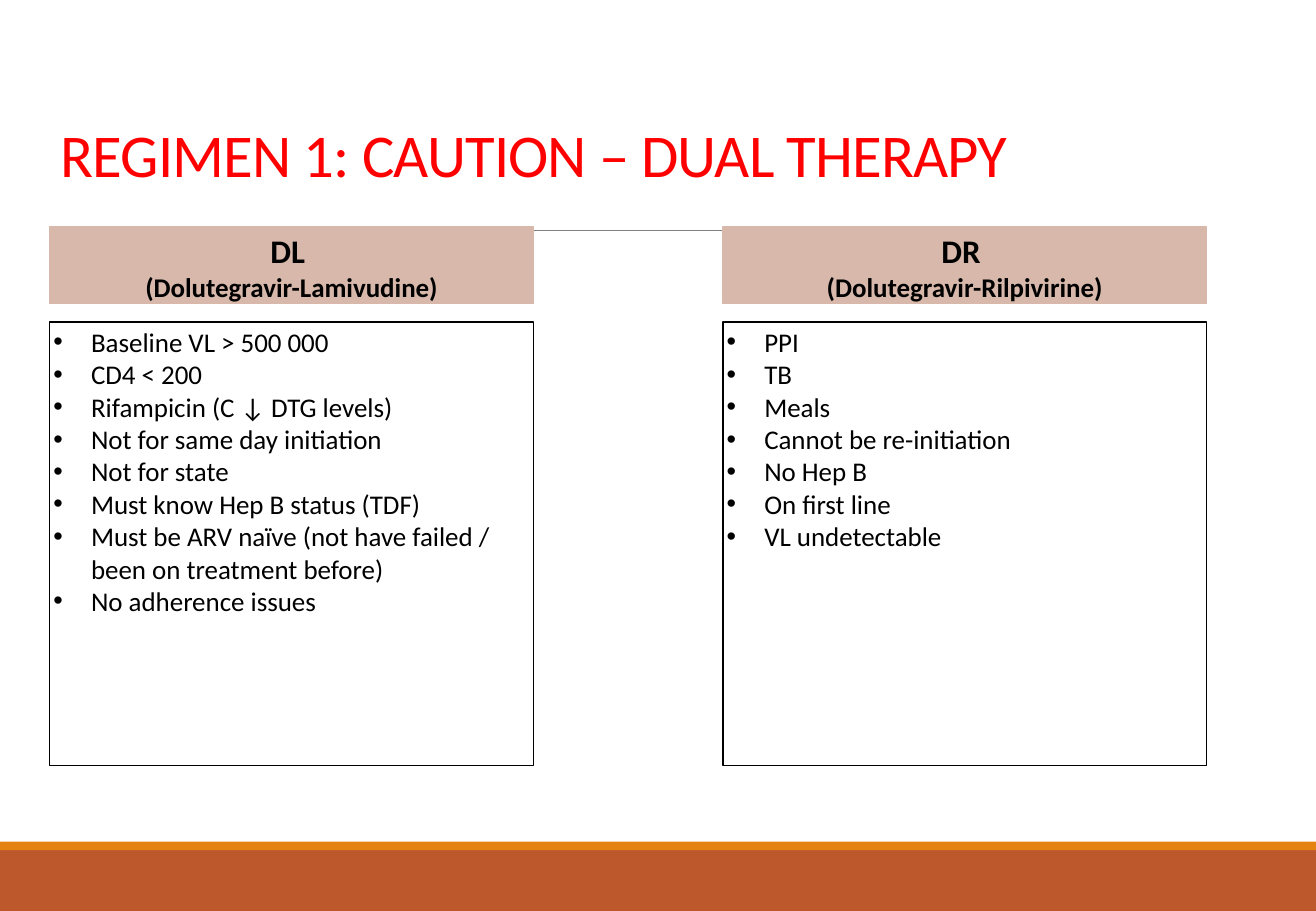
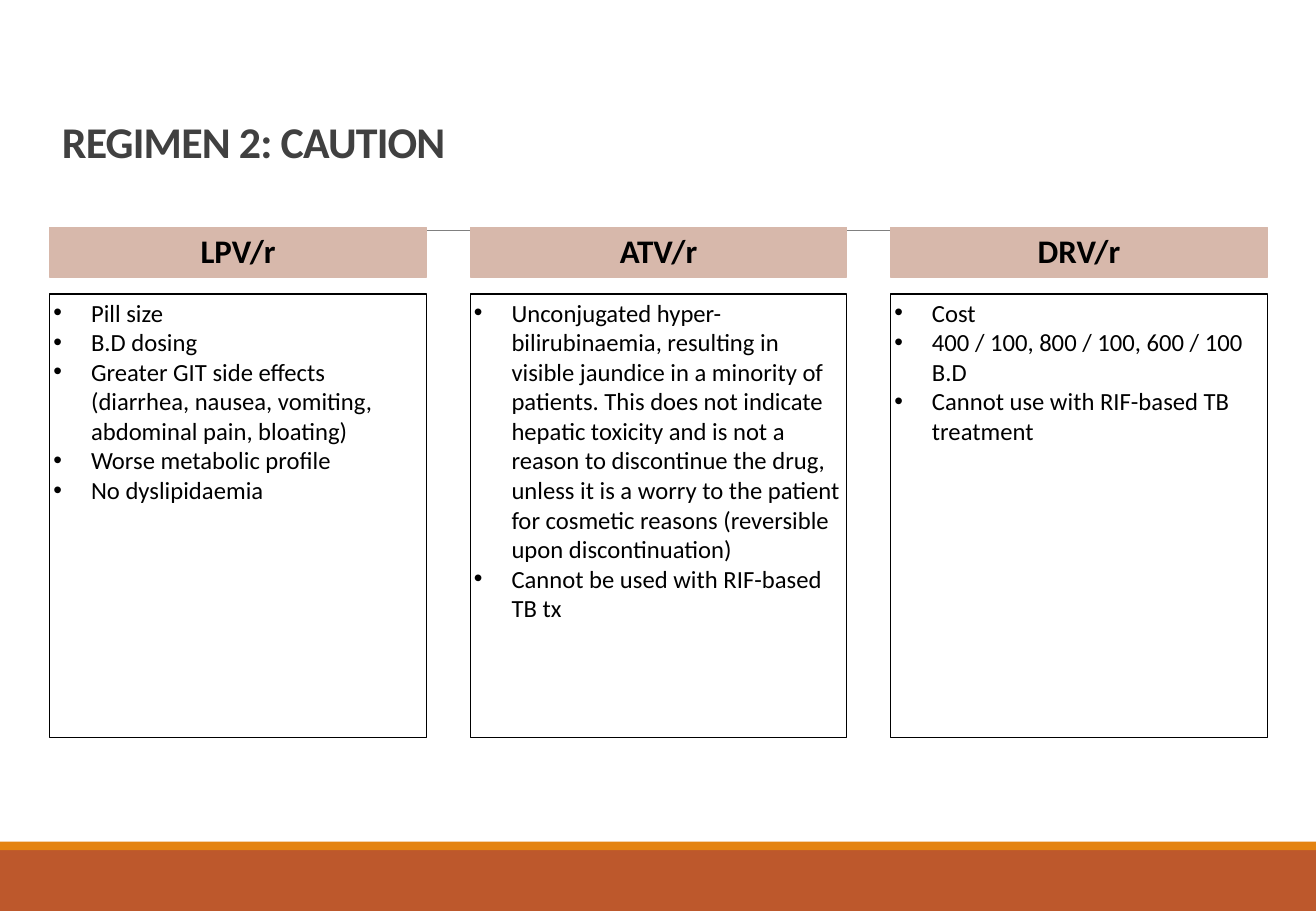
"""Build two slides on cautions for HIV treatment regimens."""
from lxml import etree
from pptx import Presentation
from pptx.dml.color import RGBColor
from pptx.enum.shapes import MSO_CONNECTOR, MSO_SHAPE
from pptx.enum.text import MSO_ANCHOR, MSO_AUTO_SIZE, PP_ALIGN
from pptx.oxml.ns import qn
from pptx.util import Inches, Pt

RECTANGLE = MSO_SHAPE.RECTANGLE
STRAIGHT = MSO_CONNECTOR.STRAIGHT
TOP, BOTTOM = MSO_ANCHOR.TOP, MSO_ANCHOR.BOTTOM
LEFT, CENTER = PP_ALIGN.LEFT, PP_ALIGN.CENTER
NO_AUTOFIT = MSO_AUTO_SIZE.NONE

FONT = "Calibri"
COLORS = {
    "band": "BD582C",
    "stripe": "E48312",
    "rule": "808080",
    "header": "D7B8AB",
    "box": "FFFFFF",
    "text": "000000",
    "alert": "FF0000",
    "title": "404040",
}
SLIDE_WIDTH, SLIDE_HEIGHT = 10.83, 7.5
COLUMN_LEFT, HEADER_TOP, BOX_HEIGHT = 0.41, 1.87, 3.65
PADDING, INDENT = 0.03, 0.31

SLIDES = [
    {
        "title": [("REGIMEN 1: CAUTION – DUAL THERAPY", 36, False)],
        "title_color": "alert",
        "title_box": (0.4, 0.02, 8.94, 1.59),
        "column_width": 3.98,
        "column_step": 5.54,
        "header_height": 0.63,
        "box_top": 2.65,
        "text_size": 16,
        "columns": [
            ("DL \v(Dolutegravir-Lamivudine)", [
                "Baseline VL > 500 000",
                "CD4 < 200",
                "Rifampicin (C ↓ DTG levels)",
                "Not for same day initiation",
                "Not for state",
                "Must know Hep B status (TDF)",
                "Must be ARV naïve (not have failed / been on treatment before)",
                "No adherence issues",
            ]),
            ("DR \v(Dolutegravir-Rilpivirine)", [
                "PPI",
                "TB",
                "Meals",
                "Cannot be re-initiation",
                "No Hep B",
                "On first line",
                "VL undetectable",
            ]),
        ],
    },
    {
        "title": [("REGIMEN 2: CAUTION ", 26, True), (" ", 35.8, False)],
        "title_color": "title",
        "title_box": (0.41, 0.94, 8.94, 0.52),
        "column_width": 3.1,
        "column_step": 3.46,
        "header_height": 0.41,
        "box_top": 2.42,
        "text_size": 14.6,
        "columns": [
            ("LPV/r", [
                "Pill size",
                "B.D dosing",
                "Greater GIT side effects (diarrhea, nausea, vomiting, "
                "abdominal pain, bloating)",
                "Worse metabolic profile",
                "No dyslipidaemia",
            ]),
            ("ATV/r", [
                "Unconjugated hyper-bilirubinaemia, resulting in visible jaundice "
                "in a minority of patients. This does not indicate hepatic toxicity "
                "and is not a reason to discontinue the drug, unless it is a worry "
                "to the patient for cosmetic reasons (reversible upon "
                "discontinuation)",
                "Cannot be used with RIF-based TB tx",
            ]),
            ("DRV/r", [
                "Cost",
                "400 / 100, 800 / 100, 600 / 100 B.D",
                "Cannot use with RIF-based TB treatment",
            ]),
        ],
    },
]


def add_rectangle(slide, box, fill, line=None):
    shape = slide.shapes.add_shape(RECTANGLE, *[Inches(value) for value in box])
    shape.shadow.inherit = False
    shape.fill.solid()
    shape.fill.fore_color.rgb = RGBColor.from_string(COLORS[fill])
    if line:
        shape.line.color.rgb = RGBColor.from_string(COLORS[line])
        shape.line.width = Pt(0.75)
    else:
        shape.line.fill.background()
    frame = shape.text_frame
    frame.word_wrap = True
    frame.vertical_anchor = TOP
    frame.margin_left = frame.margin_right = Inches(PADDING)
    frame.margin_top = frame.margin_bottom = Inches(PADDING)
    return shape


def format_run(run, size, color, bold=False):
    run.font.name = FONT
    run.font.size = Pt(size)
    run.font.bold = bold
    run.font.color.rgb = RGBColor.from_string(COLORS[color])


presentation = Presentation()
presentation.slide_width = Inches(SLIDE_WIDTH)
presentation.slide_height = Inches(SLIDE_HEIGHT)
layout = presentation.slide_layouts[5]
slides = [presentation.slides.add_slide(layout) for content in SLIDES]

band = add_rectangle(slides[0], (0, 7, SLIDE_WIDTH, 0.5), "band")
stripe = add_rectangle(slides[0], (0, 6.93, SLIDE_WIDTH, 0.07), "stripe")
rule = slides[0].shapes.add_connector(
    STRAIGHT, Inches(1.06), Inches(1.9), Inches(9.92), Inches(1.9))
rule.line.color.rgb = RGBColor.from_string(COLORS["rule"])
rule.line.width = Pt(0.5)
etree.SubElement(rule.element.spPr, qn("a:effectLst"))

for index, shape in enumerate((band, stripe, rule)):
    shape.element[0][0].set("id", str(100 + index))
    layout.shapes.element.insert(2 + index, shape.element)

for slide, content in zip(slides, SLIDES):
    title = slide.shapes.title
    title.left, title.top, title.width, title.height = [
        Inches(value) for value in content["title_box"]]
    frame = title.text_frame
    frame.auto_size = NO_AUTOFIT
    frame.word_wrap = True
    frame.vertical_anchor = BOTTOM
    paragraph = frame.paragraphs[0]
    paragraph.alignment = LEFT
    paragraph.line_spacing = 0.85
    for text, size, bold in content["title"]:
        run = paragraph.add_run()
        run.text = text
        format_run(run, size, content["title_color"], bold)
        run.font._element.set("spc", "-50")

    width = content["column_width"]
    for index, (heading, items) in enumerate(content["columns"]):
        left = COLUMN_LEFT + index * content["column_step"]

        box = add_rectangle(
            slide, (left, content["box_top"], width, BOX_HEIGHT), "box", "text")
        box.text_frame.text = "\n".join(items)
        for paragraph in box.text_frame.paragraphs:
            paragraph.alignment = LEFT
            properties = paragraph._p.get_or_add_pPr()
            properties.set("marL", str(Inches(INDENT)))
            properties.set("indent", str(-Inches(INDENT)))
            etree.SubElement(properties, qn("a:buFont"), typeface="Arial")
            etree.SubElement(properties, qn("a:buChar"), char="•")
            format_run(paragraph.runs[0], content["text_size"], "text")

        header = add_rectangle(
            slide, (left, HEADER_TOP, width, content["header_height"]),
            "header", "header")
        paragraph = header.text_frame.paragraphs[0]
        paragraph.text = heading
        paragraph.alignment = CENTER
        for run, size in zip(paragraph.runs, (19.5, 16)):
            format_run(run, size, "text", True)

presentation.save("out.pptx")
